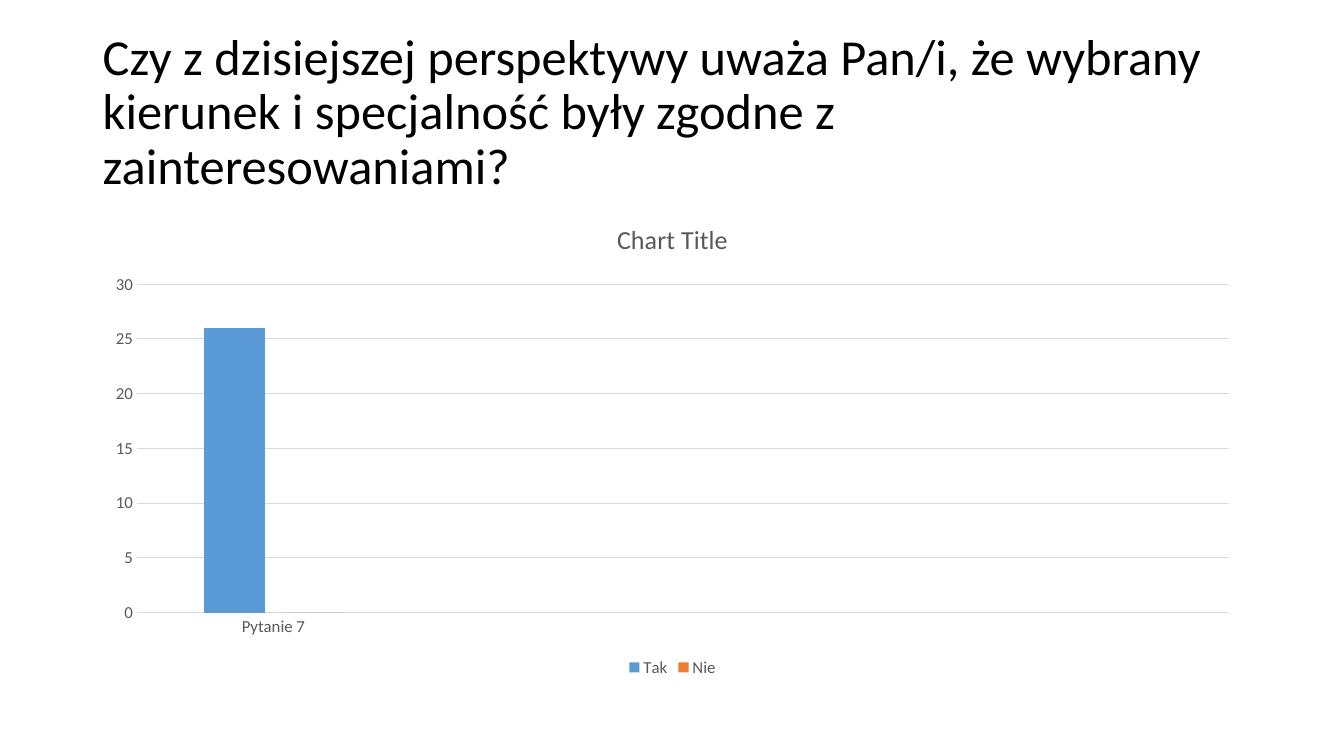
from dataclasses import dataclass

import pptx
import pptx.chart.data
import pptx.dml.color
import pptx.enum.chart
import pptx.enum.text
import pptx.util
from pptx.util import Inches


@dataclass(frozen=True)
class Theme:
    font: str = "Calibri"
    ink: str = "000000"
    muted: str = "595959"
    grid: str = "D9D9D9"
    yes: str = "5B9BD5"
    no: str = "ED7D31"
    heading_size: float = 36
    chart_title_size: float = 18.6
    label_size: float = 12
    line_width: float = 0.75


def rgb(value):
    return pptx.dml.color.RGBColor.from_string(value)


def style_font(font, name, size, color):
    font.name = name
    font.size = pptx.util.Pt(size)
    font.bold = False
    font.color.rgb = rgb(color)


def write_text(frame, text, *, font, size, color, line_spacing=None):
    paragraph = frame.paragraphs[0]
    paragraph.line_spacing = line_spacing
    run = paragraph.add_run()
    run.text = text
    style_font(run.font, font, size, color)


class SurveySlide:
    def __init__(self, slide, theme):
        self.slide = slide
        self.theme = theme

    def heading(self, text, left, top, width, height):
        question = self.slide.shapes.add_textbox(left, top, width, height)
        frame = question.text_frame
        frame.word_wrap = True
        frame.vertical_anchor = pptx.enum.text.MSO_ANCHOR.MIDDLE
        write_text(frame, text, font=self.theme.font, size=self.theme.heading_size,
                   color=self.theme.ink, line_spacing=0.9)

    def label_font(self, font):
        style_font(font, self.theme.font, self.theme.label_size, self.theme.muted)

    def grid_line(self, line):
        line.color.rgb = rgb(self.theme.grid)
        line.width = pptx.util.Pt(self.theme.line_width)

    def column_chart(self, title, categories, answers, left, top, width, height):
        data = pptx.chart.data.CategoryChartData()
        data.categories = categories
        for name, values, _ in answers:
            data.add_series(name, values)
        chart = self.slide.shapes.add_chart(
            pptx.enum.chart.XL_CHART_TYPE.COLUMN_CLUSTERED,
            left, top, width, height, data).chart
        self.label_font(chart.font)

        chart.has_title = True
        write_text(chart.chart_title.text_frame, title, font=self.theme.font,
                   size=self.theme.chart_title_size, color=self.theme.muted)
        chart.chart_title.include_in_layout = False

        chart.has_legend = True
        chart.legend.position = pptx.enum.chart.XL_LEGEND_POSITION.BOTTOM
        chart.legend.include_in_layout = False
        self.label_font(chart.legend.font)

        for axis in (chart.category_axis, chart.value_axis):
            axis.major_tick_mark = pptx.enum.chart.XL_TICK_MARK.NONE
            axis.minor_tick_mark = pptx.enum.chart.XL_TICK_MARK.NONE
            self.label_font(axis.tick_labels.font)
        self.grid_line(chart.category_axis.format.line)
        chart.value_axis.format.line.fill.background()
        chart.value_axis.has_major_gridlines = True
        self.grid_line(chart.value_axis.major_gridlines.format.line)

        plot = chart.plots[0]
        plot.vary_by_categories = False
        plot.gap_width = 219
        plot.overlap = -27
        for series, (_, _, color) in zip(plot.series, answers):
            series.invert_if_negative = False
            series.format.fill.solid()
            series.format.fill.fore_color.rgb = rgb(color)


def main():
    theme = Theme()
    deck = pptx.Presentation()
    deck.slide_width = Inches(13.33)
    deck.slide_height = Inches(7.5)
    survey = SurveySlide(deck.slides.add_slide(deck.slide_layouts[6]), theme)

    left, width = Inches(0.92), Inches(11.5)
    survey.heading(
        "Czy z dzisiejszej perspektywy uważa Pan/i, że wybrany kierunek "
        "i specjalność były zgodne z zainteresowaniami?",
        left, Inches(0.4), width, Inches(1.45))
    survey.column_chart(
        "Chart Title",
        ["Pytanie 7", "", "", ""],
        [("Tak", (26, None, None, None), theme.yes),
         ("Nie", (0, None, None, None), theme.no)],
        left, Inches(2), width, Inches(4.76))
    deck.save("out.pptx")


if __name__ == "__main__":
    main()
